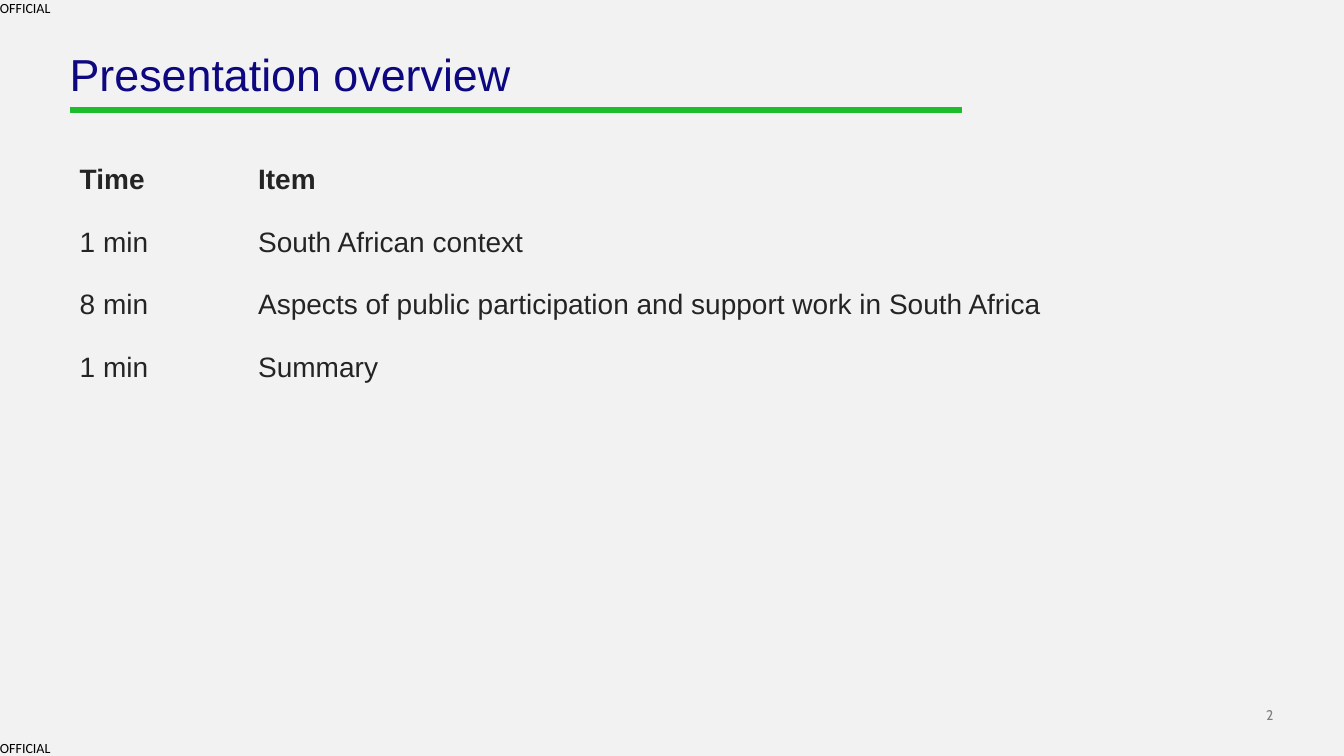
import pptx
import pptx.dml.color
import pptx.enum.text
import pptx.util

Inches = pptx.util.Inches
RGBColor = pptx.dml.color.RGBColor
Align = pptx.enum.text.PP_ALIGN
Anchor = pptx.enum.text.MSO_ANCHOR

HEADING = "Presentation overview"
AGENDA = [
    ("Time", "Item"),
    ("1 min", "South African context"),
    ("8 min", "Aspects of public participation and support work in South Africa"),
    ("1 min", "Summary"),
]
MARKING = "OFFICIAL"
PAGE_NUMBER = "2"

BACKGROUND = RGBColor(0xF2, 0xF2, 0xF2)
NAVY = RGBColor(0x0D, 0x07, 0x80)
GREEN = RGBColor(0x1C, 0xBC, 0x2B)
CHARCOAL = RGBColor(0x24, 0x24, 0x24)
GREY = RGBColor(0x7F, 0x7F, 0x7F)
BLACK = RGBColor(0, 0, 0)

WIDTH, HEIGHT = 13.33, 7.5
LEFT = 0.69
UNDERLINE = [(0.7, 1.07), (9.54, 1.07), (9.54, 1.11), (0.7, 1.11)]
COLUMN_WIDTHS = (1.77, 9.86)
ROW_HEIGHT = 0.62
MARKING_TOPS = (0, 7.34)
NO_STYLE_NO_GRID = "{2D5ABB26-0587-4C30-8999-92F81FD0307C}"


def write(frame, text, size=20, font="Arial", color=CHARCOAL, bold=False,
          align=Align.LEFT, spacing=1.0):
    paragraph = frame.paragraphs[0]
    paragraph.alignment = align
    paragraph.line_spacing = spacing
    run = paragraph.add_run()
    run.text = text
    run.font.size = pptx.util.Pt(size)
    run.font.name = font
    run.font.color.rgb = color
    run.font.bold = bold


def clear_insets(frame, anchor):
    frame.margin_left = frame.margin_right = 0
    frame.margin_top = frame.margin_bottom = 0
    frame.vertical_anchor = anchor


def add_label(slide, text, left, top, width, height, anchor=Anchor.TOP, **text_format):
    label = slide.shapes.add_textbox(Inches(left), Inches(top), Inches(width), Inches(height))
    clear_insets(label.text_frame, anchor)
    write(label.text_frame, text, size=10, **text_format)


def add_heading(slide):
    heading = slide.shapes.title
    heading.left, heading.top = Inches(LEFT), Inches(0.52)
    heading.width, heading.height = Inches(8.86), Inches(0.48)
    clear_insets(heading.text_frame, Anchor.TOP)
    write(heading.text_frame, HEADING, size=32, color=NAVY, spacing=0.9)

    corners = [(Inches(x), Inches(y)) for x, y in UNDERLINE]
    outline = slide.shapes.build_freeform(*corners[0])
    outline.add_line_segments(corners[1:], close=True)
    underline = outline.convert_to_shape()
    underline.shadow.inherit = False
    underline.fill.solid()
    underline.fill.fore_color.rgb = GREEN
    underline.line.color.rgb = GREEN
    underline.line.width = pptx.util.Pt(0.5)


def add_agenda(slide):
    frame = slide.shapes.add_table(
        len(AGENDA), len(COLUMN_WIDTHS), Inches(LEFT), Inches(1.58),
        Inches(sum(COLUMN_WIDTHS)), Inches(ROW_HEIGHT * len(AGENDA)))
    agenda = frame.table
    agenda.first_row = agenda.horz_banding = False
    frame.element.xpath(".//a:tableStyleId")[0].text = NO_STYLE_NO_GRID
    for column, width in zip(agenda.columns, COLUMN_WIDTHS):
        column.width = Inches(width)
    for row_index, entries in enumerate(AGENDA):
        agenda.rows[row_index].height = Inches(ROW_HEIGHT)
        for column_index, entry in enumerate(entries):
            cell = agenda.cell(row_index, column_index)
            cell.fill.background()
            write(cell.text_frame, entry, bold=row_index == 0)


def main():
    presentation = pptx.Presentation()
    presentation.slide_width = Inches(WIDTH)
    presentation.slide_height = Inches(HEIGHT)
    slide = presentation.slides.add_slide(presentation.slide_layouts[5])
    slide.background.fill.solid()
    slide.background.fill.fore_color.rgb = BACKGROUND

    add_heading(slide)
    add_agenda(slide)
    for top in MARKING_TOPS:
        add_label(slide, MARKING, 0, top, 0.53, 0.16, font="Calibri", color=BLACK)
    add_label(slide, PAGE_NUMBER, 12.21, 7.01, 0.42, 0.17, anchor=Anchor.BOTTOM,
              font="Cabin", color=GREY, align=Align.RIGHT)
    presentation.save("out.pptx")


if __name__ == "__main__":
    main()
